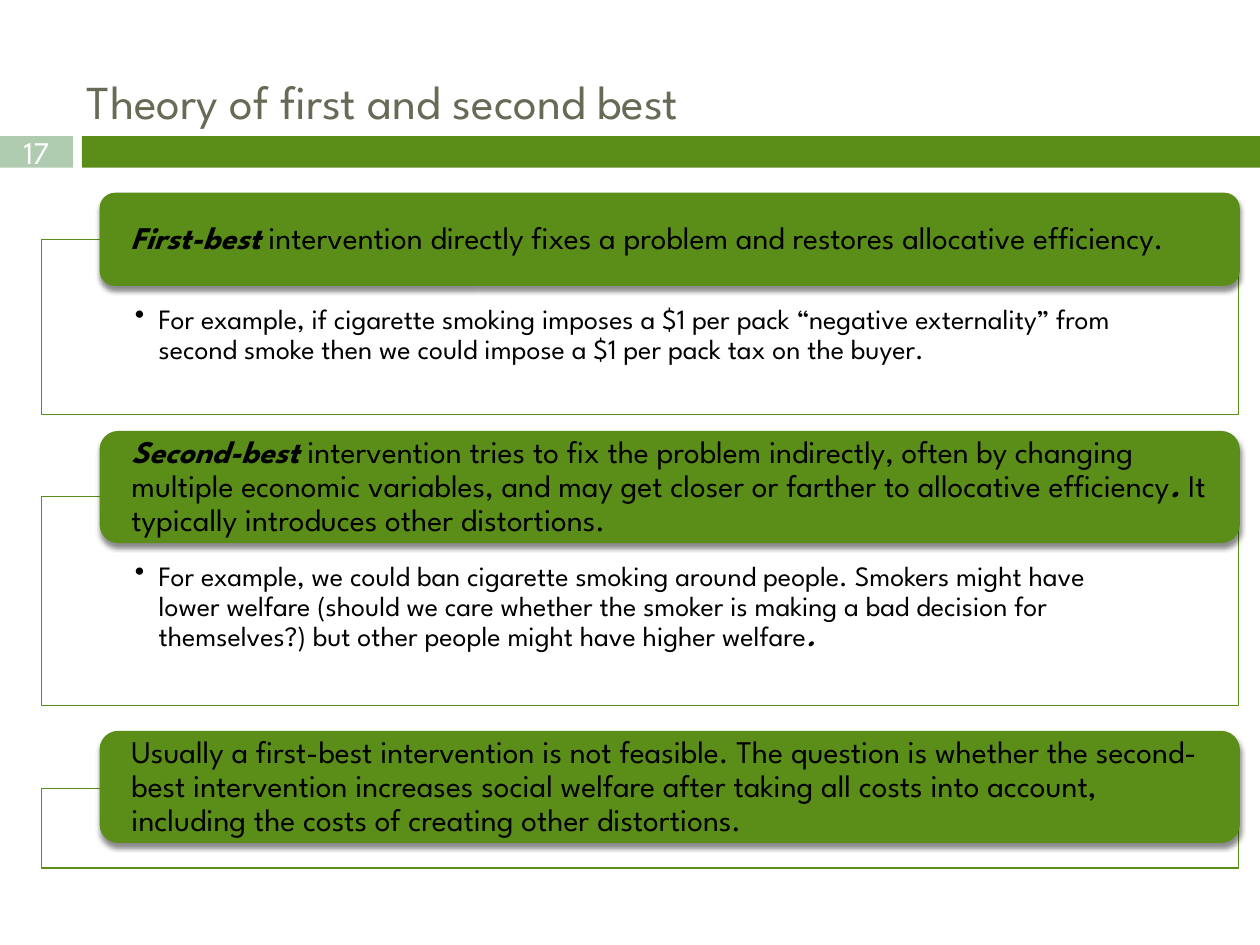
from dataclasses import dataclass

from lxml.etree import SubElement
from pptx import Presentation
from pptx.dml.color import RGBColor
from pptx.enum.shapes import MSO_SHAPE
from pptx.enum.text import MSO_ANCHOR, PP_ALIGN
from pptx.oxml.ns import qn
from pptx.util import Emu, Inches, Pt

COLORS = {"green": "5A8E19", "sage": "B0CCB0", "title": "676A55",
          "white": "FFFFFF", "black": "000000"}
FONT = "League Spartan"

# Grid: 100 columns by 75 rows
COLS, ROWS = 100, 75
WIDTH, HEIGHT = Inches(10), Inches(7.5)
FRAME_LEFT, FRAME_COLS = 3.3, 95
HEAD_LEFT, HEAD_COLS = 7.9, 90.5
BAR_TOP, BAR_ROWS = 10.8, 2.5


@dataclass(frozen=True)
class Run:
    text: str
    strong: bool = False  # bold italic


@dataclass(frozen=True)
class Block:
    head_top: float
    head_rows: float
    frame_top: float
    frame_rows: float
    head: tuple[Run, ...]
    detail: tuple[Run, ...] = ()


BLOCKS = (
    Block(15.3, 7.4, 19, 13.9,
          (Run("First-best", True),
           Run(" intervention directly fixes a problem and restores allocative efficiency.")),
          (Run("For example, if cigarette smoking imposes a $1 per pack “negative externality” "
               "from second smoke then we could impose a $1 per pack tax on the buyer."),)),
    Block(34.2, 8.9, 39.4, 16.6,
          (Run("Second-best ", True),
           Run("intervention tries to fix the problem indirectly, often by changing multiple "
               "economic variables, and may get closer or farther to allocative efficiency"),
           Run(". ", True),
           Run("It typically introduces other distortions.")),
          (Run("For example, we could ban cigarette smoking around people. Smokers might have "
               "lower welfare (should we care whether the smoker is making a bad decision for "
               "themselves?) but other people might have higher welfare"),
           Run(".", True))),
    Block(58, 8.9, 62.6, 6.3,
          (Run("Usually a first-best intervention is not feasible. The question is whether the "
               "second-best intervention increases social welfare after taking all costs into "
               "account, including the costs of creating other distortions."),)),
)


def rgb(name: str) -> RGBColor:
    return RGBColor.from_string(COLORS[name])


def cell(left: float, top: float, cols: float, rows: float) -> tuple[Emu, ...]:
    x, y = WIDTH / COLS, HEIGHT / ROWS
    return tuple(Emu(round(v)) for v in (left * x, top * y, cols * x, rows * y))


def add_box(s, kind, area: tuple[Emu, ...], fill: str):
    sp = s.shapes.add_shape(kind, *area)
    sp.shadow.inherit = False
    sp.fill.solid()
    sp.fill.fore_color.rgb = rgb(fill)
    sp.line.fill.background()
    return sp


def write(sp, runs: tuple[Run, ...], size: float, color: str, insets: tuple[float, ...],
          anchor=MSO_ANCHOR.TOP, align=PP_ALIGN.LEFT, spacing: float = 1.0):
    tf = sp.text_frame
    tf.word_wrap = True
    tf.vertical_anchor = anchor
    tf.margin_left, tf.margin_top, tf.margin_right, tf.margin_bottom = map(Inches, insets)
    p = tf.paragraphs[0]
    p.alignment = align
    p.line_spacing = spacing
    for run in runs:
        r = p.add_run()
        r.text = run.text
        r.font.name, r.font.size = FONT, Pt(size)
        r.font.bold = r.font.italic = run.strong
        r.font.color.rgb = rgb(color)
    return p


def add_bullet(p) -> None:
    pPr = p._p.get_or_add_pPr()
    pPr.set("marL", str(Inches(0.19)))
    pPr.set("indent", str(-Inches(0.19)))
    SubElement(pPr, qn("a:buChar"), char="•")


def add_shadow(sp) -> None:
    effects = sp._element.spPr.find(qn("a:effectLst"))
    shadow = SubElement(effects, qn("a:outerShdw"), blurRad=str(Pt(3)), dist=str(Pt(2.4)),
                        dir="5400000", rotWithShape="0")
    color = SubElement(shadow, qn("a:srgbClr"), val=COLORS["black"])
    SubElement(color, qn("a:alpha"), val="45000")


def add_block(s, block: Block) -> None:
    # Outlined frame with the example
    frame = add_box(s, MSO_SHAPE.RECTANGLE,
                    cell(FRAME_LEFT, block.frame_top, FRAME_COLS, block.frame_rows), "white")
    color = frame._element.spPr.find(qn("a:solidFill"))[0]
    SubElement(color, qn("a:alpha"), val="90000")
    frame.line.color.rgb = rgb("green")
    frame.line.width = Pt(0.79)
    if block.detail:
        add_bullet(write(frame, block.detail, 16, "black", (0.74, 0.52, 0.74, 0.12),
                         spacing=0.9))

    # Rounded heading over the frame's top edge
    head = add_box(s, MSO_SHAPE.ROUNDED_RECTANGLE,
                   cell(HEAD_LEFT, block.head_top, HEAD_COLS, block.head_rows), "green")
    add_shadow(head)
    write(head, block.head, 18, "black", (0.21, 0, 0.21, 0), MSO_ANCHOR.MIDDLE, spacing=0.9)


def main() -> None:
    prs = Presentation()
    prs.slide_width, prs.slide_height = WIDTH, HEIGHT
    s = prs.slides.add_slide(prs.slide_layouts[6])

    # Slide number and title bar
    number = add_box(s, MSO_SHAPE.RECTANGLE, cell(0, BAR_TOP, 5.8, BAR_ROWS), "sage")
    write(number, (Run("17"),), 18, "white", (0, 0, 0, 0), MSO_ANCHOR.MIDDLE, PP_ALIGN.CENTER)
    add_box(s, MSO_SHAPE.RECTANGLE, cell(6.5, BAR_TOP, 93.5, BAR_ROWS), "green")

    # Title
    title = s.shapes.add_textbox(*cell(5, 5.2, 95, 6.5))
    write(title, (Run("Theory of first and second best"),), 27, "title", (0.19, 0.05, 0.1, 0.05))

    # Three stacked statements
    for block in BLOCKS:
        add_block(s, block)

    prs.save("out.pptx")


if __name__ == "__main__":
    main()
